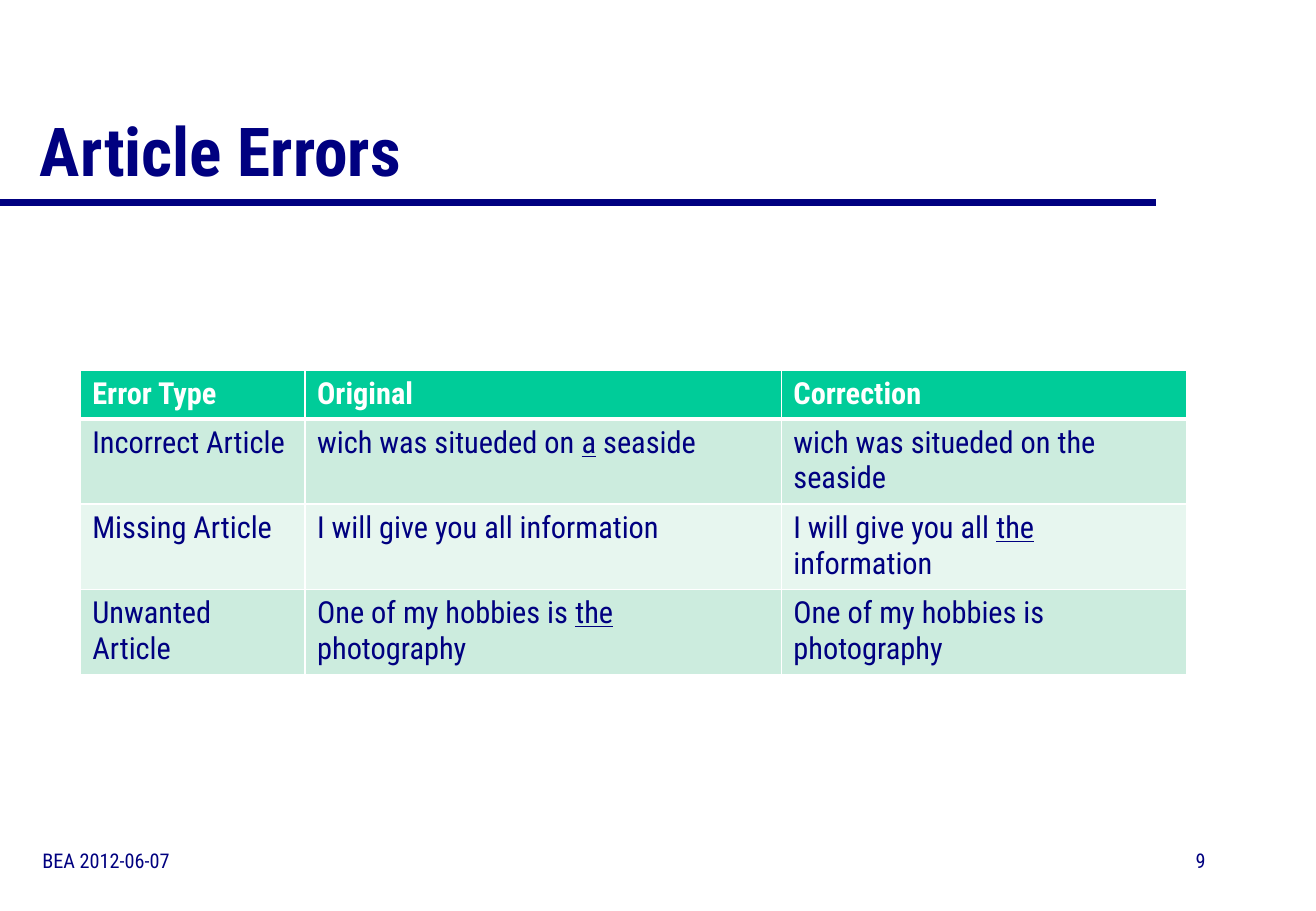
"""Build the Article Errors slide with its table of error types."""
from lxml import etree
from pptx import Presentation
from pptx.dml.color import RGBColor
from pptx.enum import shapes, text
from pptx.oxml import ns
from pptx.util import Inches, Pt

NAVY = RGBColor(0x00, 0x00, 0x80)
WHITE = RGBColor(0xFF, 0xFF, 0xFF)
GREEN = RGBColor(0x00, 0xCC, 0x99)
MINT = RGBColor(0xCC, 0xEC, 0xDE)
PALE = RGBColor(0xE7, 0xF6, 0xEF)

FONT = "Roboto Condensed"
UNDERLINE_MARK = "_"
TITLE = {"size": Pt(40), "bold": True}
FOOTER = {"size": Pt(12)}
HEADER = {"size": Pt(18), "bold": True}
BODY = {"size": Pt(18), "bold": False}

LEFT, RIGHT = text.PP_ALIGN.LEFT, text.PP_ALIGN.RIGHT
BOTTOM, MIDDLE = text.MSO_ANCHOR.BOTTOM, text.MSO_ANCHOR.MIDDLE

BOXES = [
    ("Article Errors", (0.23, 0.26, 9.25, 1.36), TITLE, LEFT, BOTTOM, 0.9),
    ("BEA 2012-06-07", (0.25, 6.83, 3.43, 0.5), FOOTER, LEFT, MIDDLE, 1.0),
    ("9", (7.76, 6.83, 2.26, 0.5), FOOTER, RIGHT, MIDDLE, 1.0),
]
ROWS = [
    ("Error Type", "Original", "Correction"),
    ("Incorrect Article", "wich was situeded on _a_ seaside", "wich was situeded on the seaside"),
    ("Missing Article", "I will give you all information", "I will give you all _the_ information"),
    ("Unwanted Article", "One of my hobbies is _the_ photography", "One of my hobbies is photography"),
]
TABLE_LEFT, TABLE_TOP = 0.66, 3.05
COLUMN_WIDTHS = [1.85, 3.92, 3.34]
ROW_HEIGHTS = [0.38, 0.69, 0.69, 0.69]


def write(para, content, color, style):
    """Add the content as runs, underlining what stands between marks."""
    for index, part in enumerate(content.split(UNDERLINE_MARK)):
        if not part:
            continue
        span = para.add_run()
        span.text = part
        span.font.color.rgb = color
        for name, value in {"name": FONT, "underline": index % 2 == 1, **style}.items():
            setattr(span.font, name, value)


def add_borders(cell, bottom_width):
    """Draw white borders around a cell."""
    widths = {"lnL": 1, "lnR": 1, "lnT": 1, "lnB": bottom_width}
    properties = cell._tc.get_or_add_tcPr()
    for tag, width in widths.items():
        border = etree.SubElement(properties, ns.qn(f"a:{tag}"), w=str(Pt(width)))
        fill = etree.SubElement(border, ns.qn("a:solidFill"))
        etree.SubElement(fill, ns.qn("a:srgbClr"), val=str(WHITE))


def add_rule(page):
    """Draw the line under the title."""
    rule = page.shapes.add_connector(
        shapes.MSO_CONNECTOR.STRAIGHT, 0, Inches(1.67), Inches(9.51), Inches(1.67))
    rule.line.color.rgb = NAVY
    rule.line.width = Pt(4)
    etree.SubElement(rule._element.spPr, ns.qn("a:effectLst"))


def add_box(page, content, place, style, align, anchor, spacing):
    """Add one text box."""
    frame = page.shapes.add_textbox(*map(Inches, place)).text_frame
    frame.word_wrap = True
    frame.vertical_anchor = anchor
    para = frame.paragraphs[0]
    para.alignment = align
    para.line_spacing = spacing
    write(para, content, NAVY, style)


def add_error_table(page):
    """Add the table of errors and corrections."""
    table = page.shapes.add_table(
        len(ROWS), len(COLUMN_WIDTHS), Inches(TABLE_LEFT), Inches(TABLE_TOP),
        Inches(sum(COLUMN_WIDTHS)), Inches(sum(ROW_HEIGHTS))).table
    for column, width in zip(table.columns, COLUMN_WIDTHS):
        column.width = Inches(width)
    for index, (row, height, contents) in enumerate(zip(table.rows, ROW_HEIGHTS, ROWS)):
        row.height = Inches(height)
        is_header = index == 0
        fill = GREEN if is_header else MINT if index % 2 else PALE
        color, style = (WHITE, HEADER) if is_header else (NAVY, BODY)
        for cell, content in zip(row.cells, contents):
            add_borders(cell, 3 if is_header else 1)
            cell.fill.solid()
            cell.fill.fore_color.rgb = fill
            write(cell.text_frame.paragraphs[0], content, color, style)


def main():
    """Build and save the deck."""
    deck = Presentation()
    deck.slide_width, deck.slide_height = Inches(10.83), Inches(7.5)
    page = deck.slides.add_slide(deck.slide_layouts[6])
    add_rule(page)
    for box in BOXES:
        add_box(page, *box)
    add_error_table(page)
    deck.save("out.pptx")


if __name__ == "__main__":
    main()
